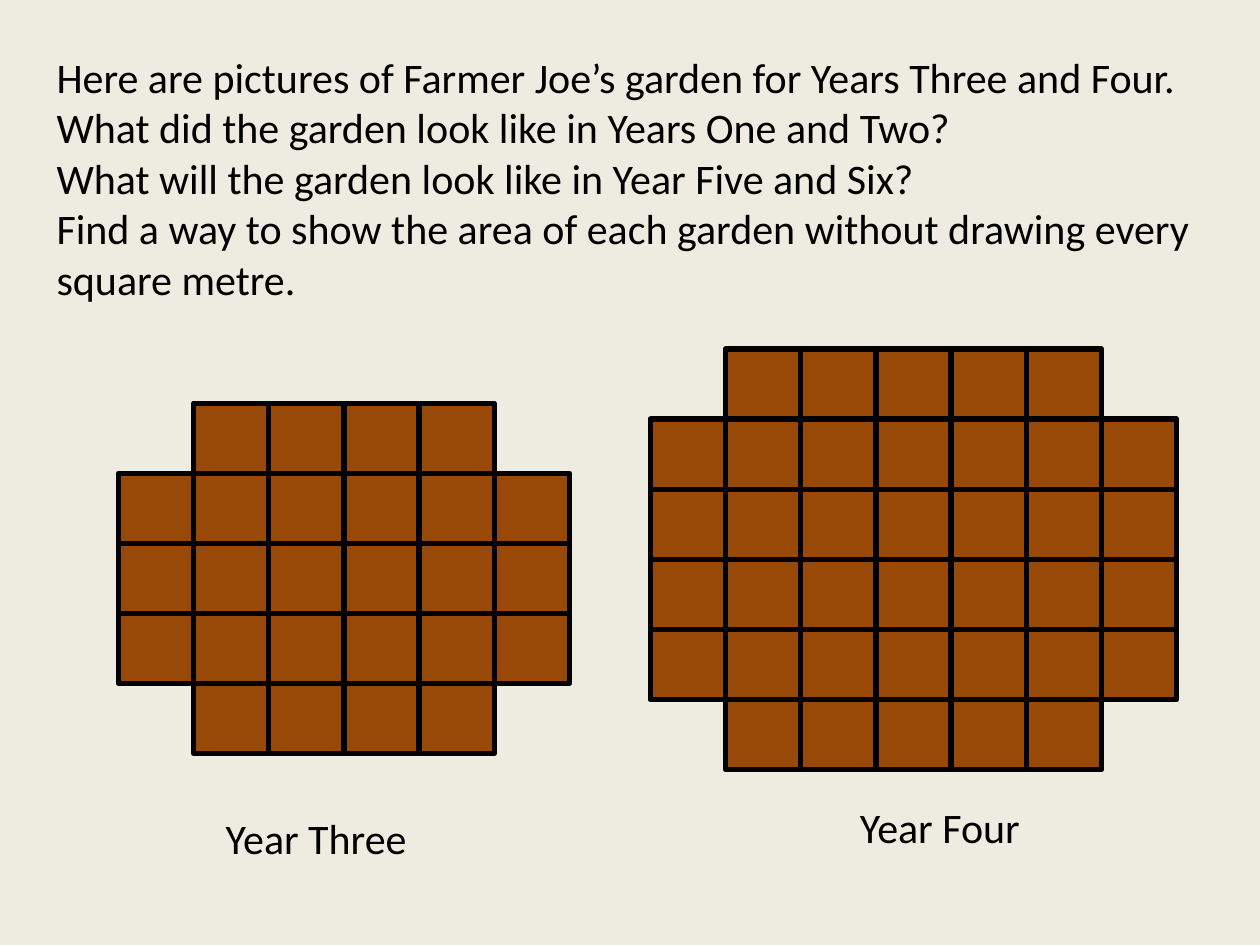
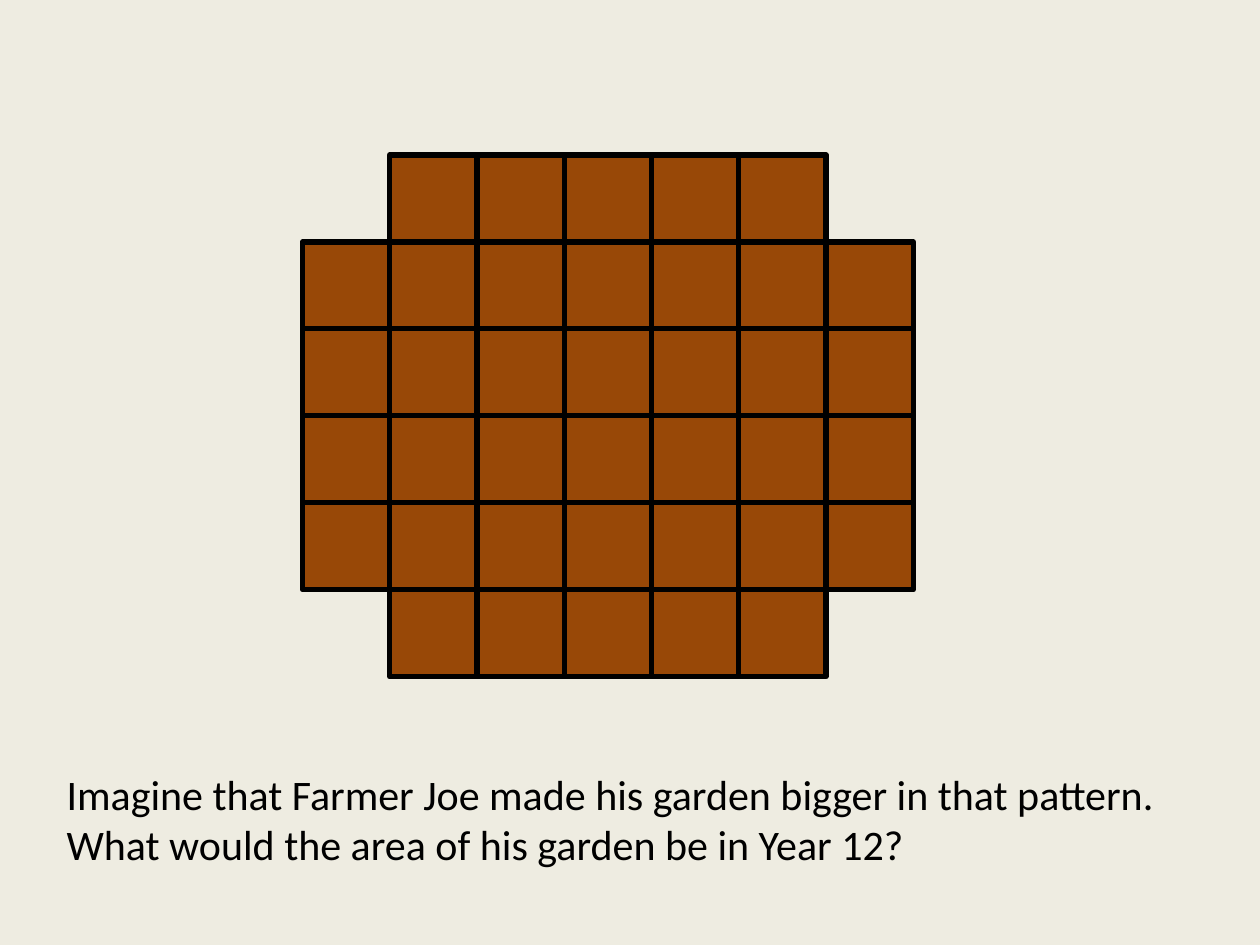
from pptx import Presentation, util as u
from pptx.dml.color import RGBColor
from pptx.enum import shapes, text

# Shared look
PAPER, SOIL, INK = "EEECE1", "984807", "000000"
FONT, TEXT_SIZE, EDGE = "Calibri", u.Pt(24), u.Pt(3)

deck = Presentation()
deck.slide_width, deck.slide_height = u.Inches(10), u.Inches(7.5)
BLANK = deck.slide_layouts[6]


def paint(fill, colour):
    fill.solid()
    fill.fore_color.rgb = RGBColor.from_string(colour)


def area(left, top, width, height):
    """Turn percentages of the slide's size into lengths."""
    across, down = deck.slide_width / 100, deck.slide_height / 100
    return [round(n) for n in (left * across, top * down, width * across, height * down)]


paint(deck.slide_master.background.fill, PAPER)

LEFT, CENTER = text.PP_ALIGN.LEFT, text.PP_ALIGN.CENTER

# Each slide: gardens (area, columns, rows) and texts (area, alignment, lines)
pages = [
    {
        "gardens": [
            (area(51.6, 36.93, 41.8, 44.53), 7, 6),
            (area(9.4, 42.67, 35.8, 37.07), 6, 5),
        ],
        "texts": [
            (area(11.3, 85.33, 27.6, 6.67), CENTER, ["Year Three"]),
            (area(60.8, 84.13, 27.6, 6.67), CENTER, ["Year Four"]),
            (area(3.5, 4.8, 92.1, 28.27), LEFT, [
                "Here are pictures of Farmer Joe’s garden for Years Three and Four.",
                "What did the garden look like in Years One and Two?",
                "What will the garden look like in Year Five and Six?",
                "Find a way to show the area of each garden without drawing every square metre.",
            ]),
        ],
    },
    {
        "gardens": [(area(24, 16.4, 48.5, 55.2), 7, 6)],
        "texts": [
            (area(4.3, 80.67, 92.9, 12.13), LEFT, [
                "Imagine that Farmer Joe made his garden bigger in that pattern.",
                "What would the area of his garden be in Year 12?",
            ]),
        ],
    },
]

for content in pages:
    page = deck.slides.add_slide(BLANK)

    # Questions and captions
    for place, alignment, lines in content["texts"]:
        frame = page.shapes.add_textbox(*place).text_frame
        frame.word_wrap = True
        frame.auto_size = text.MSO_AUTO_SIZE.SHAPE_TO_FIT_TEXT
        frame.text = "\n".join(lines)
        for para in frame.paragraphs:
            para.alignment = alignment
            para.font.name, para.font.size = FONT, TEXT_SIZE
            para.font.color.rgb = RGBColor.from_string(INK)

    # Gardens: a grid of square metres without its four corners
    for (left, top, width, height), columns, rows in content["gardens"]:
        garden = page.shapes.add_group_shape()
        side, depth = round(width / columns), round(height / rows)
        for row in range(rows):
            for column in range(columns):
                if row in (0, rows - 1) and column in (0, columns - 1):
                    continue
                square = garden.shapes.add_shape(
                    shapes.MSO_SHAPE.RECTANGLE,
                    left + column * side, top + row * depth, side, depth)
                square.shadow.inherit = False
                paint(square.fill, SOIL)
                paint(square.line.fill, INK)
                square.line.width = EDGE

deck.save("out.pptx")
